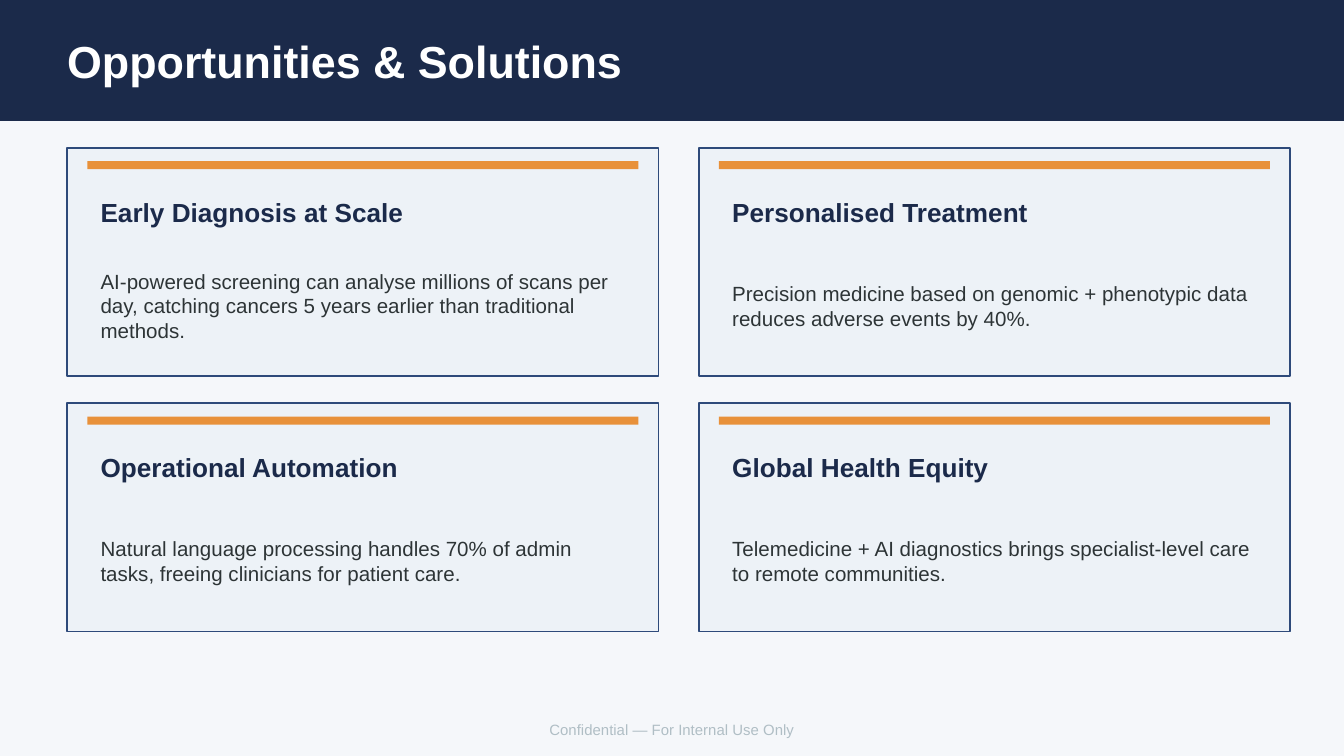
from pptx import Presentation
from pptx.dml.color import RGBColor
from pptx.enum.shapes import MSO_SHAPE as Shape
from pptx.enum.text import MSO_ANCHOR as Anchor, PP_ALIGN as Align
from pptx.util import Emu, Pt

EMU_PER_PX = 4572  # 200 px to the inch
NAVY = RGBColor(0x1B, 0x2A, 0x4A)
BLUE = RGBColor(0x2E, 0x4A, 0x7A)
ORANGE = RGBColor(0xE8, 0x91, 0x3A)
CARD_FILL = RGBColor(0xED, 0xF2, 0xF7)
PAGE = RGBColor(0xF5, 0xF7, 0xFA)
INK = RGBColor(0x2D, 0x34, 0x36)
MUTED = RGBColor(0xB0, 0xBE, 0xC5)
WHITE = RGBColor(0xFF, 0xFF, 0xFF)

CARD_WIDTH, CARD_HEIGHT = 880, 340
COLUMN_STEP, ROW_STEP = 940, 380
CARDS = [
    ("Early Diagnosis at Scale",
     "AI-powered screening can analyse millions of scans per day, "
     "catching cancers 5 years earlier than traditional methods."),
    ("Personalised Treatment",
     "Precision medicine based on genomic + phenotypic data "
     "reduces adverse events by 40%."),
    ("Operational Automation",
     "Natural language processing handles 70% of admin tasks, "
     "freeing clinicians for patient care."),
    ("Global Health Equity",
     "Telemedicine + AI diagnostics brings specialist-level care "
     "to remote communities."),
]


def px(length):
    return Emu(length * EMU_PER_PX)


def add_box(slide, left, top, width, height, fill, outline=None):
    box = slide.shapes.add_shape(
        Shape.RECTANGLE, px(left), px(top), px(width), px(height))
    box.shadow.inherit = False
    box.fill.solid()
    box.fill.fore_color.rgb = fill
    if outline is None:
        box.line.fill.background()
    else:
        box.line.color.rgb = outline
        box.line.width = Pt(1)


def add_text(slide, left, top, width, height, text, size, color,
             bold=False, align=Align.LEFT, inset=True):
    frame = slide.shapes.add_textbox(
        px(left), px(top), px(width), px(height)).text_frame
    frame.word_wrap = True
    frame.vertical_anchor = Anchor.MIDDLE
    if not inset:
        frame.margin_left = frame.margin_right = 0
        frame.margin_top = frame.margin_bottom = 0
    paragraph = frame.paragraphs[0]
    paragraph.text = text
    paragraph.alignment = align
    font = paragraph.font
    font.name, font.size, font.bold = "Arial", Pt(size), bold
    font.color.rgb = color


def add_card(slide, left, top, heading, body):
    inner_left, inner_width = left + 30, CARD_WIDTH - 60
    add_box(slide, left, top, CARD_WIDTH, CARD_HEIGHT, CARD_FILL, BLUE)
    add_box(slide, inner_left, top + 20, inner_width, 12, ORANGE)
    add_text(slide, inner_left, top + 50, inner_width, 90, heading, 14, NAVY,
             bold=True)
    add_text(slide, inner_left, top + 150, inner_width, 170, body, 11, INK)


def main():
    deck = Presentation()
    deck.slide_width, deck.slide_height = px(2000), px(1125)
    slide = deck.slides.add_slide(deck.slide_layouts[6])
    slide.background.fill.solid()
    slide.background.fill.fore_color.rgb = PAGE

    add_box(slide, 0, 0, 2000, 180, NAVY)
    add_text(slide, 100, 40, 1800, 100, "Opportunities & Solutions", 24, WHITE,
             bold=True, inset=False)
    for index, (heading, body) in enumerate(CARDS):
        row, column = divmod(index, 2)
        add_card(slide, 100 + column * COLUMN_STEP, 220 + row * ROW_STEP,
                 heading, body)
    add_text(slide, 100, 1060, 1800, 50, "Confidential — For Internal Use Only",
             8, MUTED, align=Align.CENTER)
    deck.save("out.pptx")


if __name__ == "__main__":
    main()
